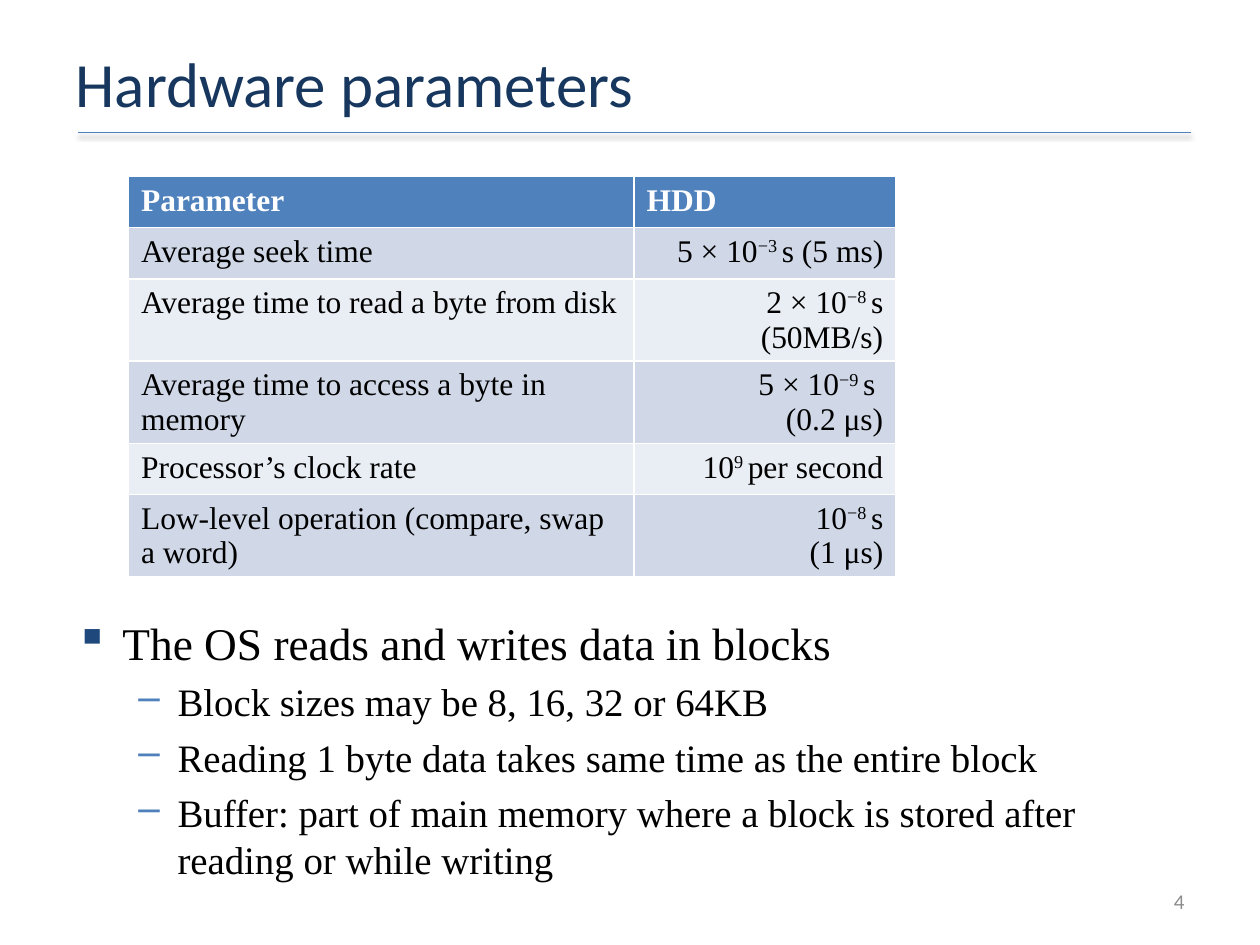
from lxml import etree
from pptx import Presentation
from pptx.dml.color import RGBColor
from pptx.enum import shapes, text
from pptx.oxml import ns
from pptx.util import Cm, Pt

HUES = {"title": "17375E", "rule": "4F81BD", "head": "4F81BD", "odd": "D0D8E8",
        "even": "E9EDF4", "white": "FFFFFF", "black": "000000",
        "square": "1F497D", "dash": "4F81BD", "number": "8C8C8C"}
SERIF, SANS = "Times New Roman", "Calibri"


def write(para, words, size, hue="black", name=SERIF, bold=False):
    """Fill a paragraph; the parts between carets are superscript."""
    for n, part in enumerate(words.split("^")):
        run = para.add_run()
        run.text = part
        look = {"size": Pt(size), "name": name, "bold": bold}
        for key, value in look.items():
            setattr(run.font, key, value)
        run.font.color.rgb = RGBColor.from_string(HUES[hue])
        if n % 2:
            run._r.get_or_add_rPr().set("baseline", "30000")


def add(parent, tag, **attrs):
    return etree.SubElement(parent, ns.qn(tag), attrs)


deck = Presentation()
deck.slide_width, deck.slide_height = Cm(25.4), Cm(19.05)
slide = deck.slides.add_slide(deck.slide_layouts[5])

# Rule under the title
rule = slide.shapes.add_connector(shapes.MSO_CONNECTOR.STRAIGHT,
                                  Cm(1.57), Cm(2.67), Cm(24), Cm(2.67))
rule.line.color.rgb = RGBColor.from_string(HUES["rule"])
rule.line.width = Pt(1)
glow = add(rule._element.spPr, "a:effectLst")
shade = add(glow, "a:outerShdw", blurRad="40000", dist="20000", dir="5400000", rotWithShape="0")
add(add(shade, "a:srgbClr", val=HUES["black"]), "a:alpha", val="38000")

# Title
title = slide.shapes.title
place = {"left": Cm(1.27), "top": Cm(0.76), "width": Cm(22.86), "height": Cm(1.8)}
for key, value in place.items():
    setattr(title, key, value)
title.text_frame.vertical_anchor = text.MSO_ANCHOR.MIDDLE
para = title.text_frame.paragraphs[0]
para.alignment = text.PP_ALIGN.LEFT
write(para, "Hardware parameters", 36, "title", SANS)

# Table of parameters
rows = [("Parameter", "HDD"),
        ("Average seek time", "5 × 10^−3 ^s (5 ms)"),
        ("Average time to read a byte from disk", "2 × 10^−8 ^s (50MB/s)"),
        ("Average time to access a byte in memory", "5 × 10^−9 ^s \n(0.2 μs)"),
        ("Processor’s clock rate", "10^9 ^per second"),
        ("Low-level operation (compare, swap a word)", "10^−8 ^s\n(1 μs)")]
table = slide.shapes.add_table(len(rows), 2, Cm(2.59), Cm(3.56),
                               Cm(15.47), Cm(1.03) * len(rows)).table
for col, width in zip(table.columns, (10.19, 5.28)):
    col.width = Cm(width)
for r, row in enumerate(rows):
    fill = "head" if r == 0 else "odd" if r % 2 else "even"
    for c, words in enumerate(row):
        cell = table.cell(r, c)
        cell.fill.solid()
        cell.fill.fore_color.rgb = RGBColor.from_string(HUES[fill])
        for n, line in enumerate(words.split("\n")):
            para = cell.text_frame.add_paragraph() if n else cell.text_frame.paragraphs[0]
            if r and c:
                para.alignment = text.PP_ALIGN.RIGHT
            write(para, line, 18, "black" if r else "white", bold=r == 0)

# Bullets: mark, mark colour, size, left indent, hanging indent
kinds = [("▪", "square", 25.9, 0.95, 0.95), ("–", "dash", 22.2, 2.06, 0.79)]
points = [(0, "The OS reads and writes data in blocks"),
          (1, "Block sizes may be 8, 16, 32 or 64KB"),
          (1, "Reading 1 byte data takes same time as the entire block"),
          (1, "Buffer: part of main memory where a block is stored after "
              "reading or while writing")]
frame = slide.shapes.add_textbox(Cm(1.27), Cm(12.27), Cm(22.86), Cm(5.46)).text_frame
frame.word_wrap = True
for n, (level, words) in enumerate(points):
    mark, hue, size, left, hang = kinds[level]
    para = frame.add_paragraph() if n else frame.paragraphs[0]
    para.level = level
    para.space_before = Pt(5)
    props = para._p.get_or_add_pPr()
    props.set("marL", str(Cm(left)))
    props.set("indent", str(-Cm(hang)))
    add(add(props, "a:buClr"), "a:srgbClr", val=HUES[hue])
    add(props, "a:buChar", char=mark)
    write(para, words, size)

# Slide number
frame = slide.shapes.add_textbox(Cm(18.21), Cm(17.65), Cm(5.92), Cm(1.02)).text_frame
frame.word_wrap = True
frame.vertical_anchor = text.MSO_ANCHOR.MIDDLE
frame.paragraphs[0].alignment = text.PP_ALIGN.RIGHT
write(frame.paragraphs[0], "4", 12, "number", SANS)

deck.save("out.pptx")
